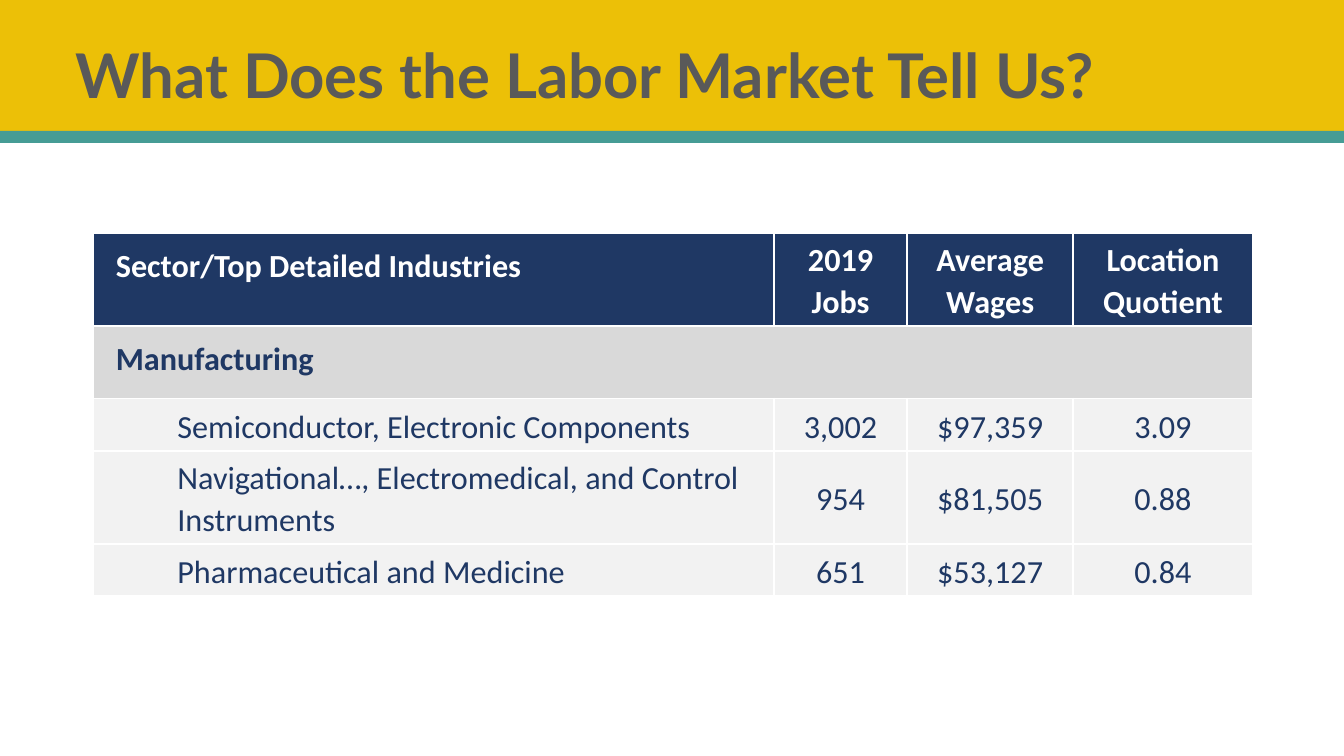
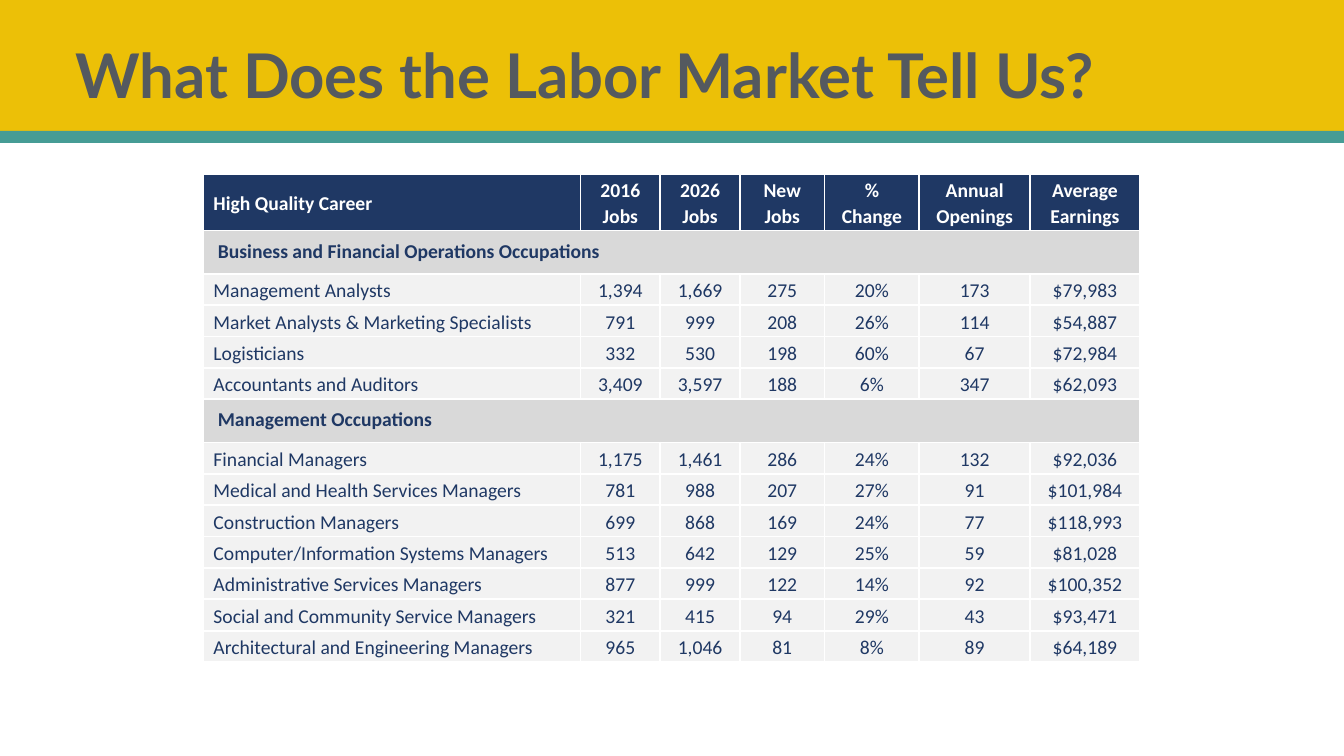
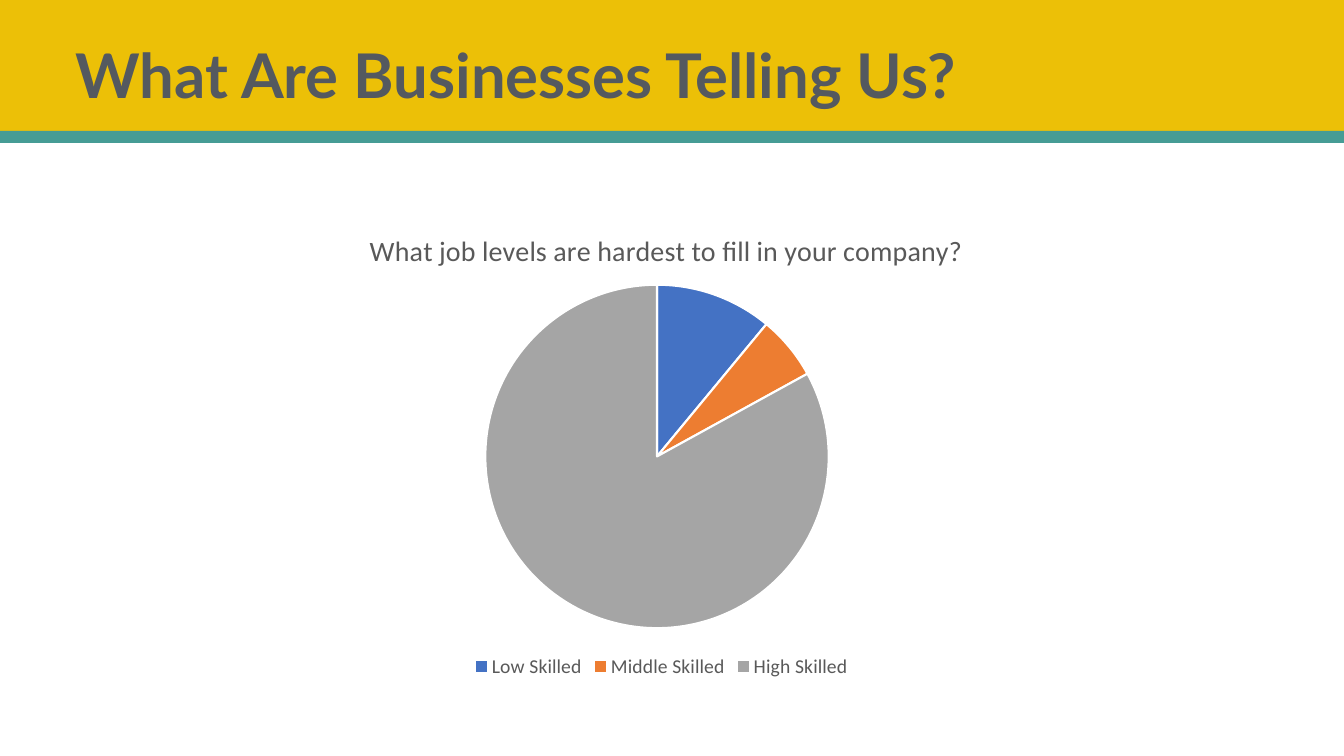
from lxml.etree import SubElement
from pptx import Presentation
from pptx.chart.data import CategoryChartData as ChartData
from pptx.dml.color import RGBColor
from pptx.enum.chart import XL_CHART_TYPE as Kind, XL_LEGEND_POSITION as Place
from pptx.enum.shapes import MSO_SHAPE as Shape
from pptx.enum.text import MSO_ANCHOR as Anchor, PP_ALIGN as Align
from pptx.oxml import parse_xml
from pptx.oxml.ns import nsdecls, qn
from pptx.util import Cm, Pt

WHITE = RGBColor(0xFF, 0xFF, 0xFF)
GOLD = RGBColor(0xEC, 0xC0, 0x07)
TEAL = RGBColor(0x46, 0x9C, 0x95)
NAVY = RGBColor(0x1F, 0x38, 0x64)
GREY = RGBColor(0x59, 0x59, 0x59)
SLATE = RGBColor(0x54, 0x59, 0x5F)
SILVER = RGBColor(0xD9, 0xD9, 0xD9)
PALE = RGBColor(0xF2, 0xF2, 0xF2)
BLUE = RGBColor(0x44, 0x72, 0xC4)
ORANGE = RGBColor(0xED, 0x7D, 0x31)
ASH = RGBColor(0xA5, 0xA5, 0xA5)

WIDTH, HEIGHT = 33.87, 19.05
BODY, HEAD = "Calibri", "Lato"

SECTORS = [
    ("Sector/Top Detailed Industries", "", "2019 Jobs", "Average Wages",
     "Location Quotient"),
    ("Manufacturing", "", "", "", ""),
    ("", "Semiconductor, Electronic Components", "3,002", "$97,359", "3.09"),
    ("", "Navigational…, Electromedical, and Control Instruments", "954",
     "$81,505", "0.88"),
    ("", "Pharmaceutical and Medicine", "651", "$53,127", "0.84"),
]

CAREERS = [
    ("High Quality Career", "2016 Jobs", "2026 Jobs", "New Jobs", "% Change",
     "Annual Openings", "Average Earnings"),
    ("Business and Financial Operations Occupations", "", "", "", "", "", ""),
    ("Management Analysts", "1,394", "1,669", "275", "20%", "173", "$79,983"),
    ("Market Analysts & Marketing Specialists", "791", "999", "208", "26%",
     "114", "$54,887"),
    ("Logisticians", "332", "530", "198", "60%", "67", "$72,984"),
    ("Accountants and Auditors", "3,409", "3,597", "188", "6%", "347",
     "$62,093"),
    ("Management Occupations", "", "", "", "", "", ""),
    ("Financial Managers", "1,175", "1,461", "286", "24%", "132", "$92,036"),
    ("Medical and Health Services Managers", "781", "988", "207", "27%", "91",
     "$101,984"),
    ("Construction Managers", "699", "868", "169", "24%", "77", "$118,993"),
    ("Computer/Information Systems Managers", "513", "642", "129", "25%", "59",
     "$81,028"),
    ("Administrative Services Managers", "877", "999", "122", "14%", "92",
     "$100,352"),
    ("Social and Community Service Managers", "321", "415", "94", "29%", "43",
     "$93,471"),
    ("Architectural and Engineering Managers", "965", "1,046", "81", "8%",
     "89", "$64,189"),
]

LEVELS = [("Low Skilled", 11, BLUE), ("Middle Skilled", 6, ORANGE),
          ("High Skilled", 83, ASH)]


def write(frame, text, size, color, font=BODY, bold=False, align=Align.LEFT,
          line=None):
    para = frame.paragraphs[0]
    para.alignment = align
    para.line_spacing = line
    run = para.add_run()
    run.text = text
    run.font.name = font
    run.font.size = Pt(size)
    run.font.bold = bold
    run.font.color.rgb = color


def add_band(slide, top, height, color):
    band = slide.shapes.add_shape(Shape.RECTANGLE, 0, Cm(top), Cm(WIDTH),
                                  Cm(height))
    band.shadow.inherit = False
    band.fill.solid()
    band.fill.fore_color.rgb = color
    band.line.fill.background()


def add_slide(deck, title, color=SLATE):
    slide = deck.slides.add_slide(deck.slide_layouts[6])
    add_band(slide, 0, 3.58, GOLD)
    add_band(slide, 3.3, 0.3, TEAL)
    box = slide.shapes.add_textbox(Cm(1.65), Cm(0.13), Cm(29.21), Cm(3.68))
    frame = box.text_frame
    frame.word_wrap = True
    frame.vertical_anchor = Anchor.MIDDLE
    write(frame, title, 44, color, font=HEAD, bold=True, line=0.9)
    return slide


def set_edges(cell, hidden=""):
    """Draw white borders, except on the sides named in hidden."""
    props = cell._tc.get_or_add_tcPr()
    for side in "LRTB":
        edge = SubElement(props, qn(f"a:ln{side}"), w=str(Pt(1.5)))
        if side in hidden:
            SubElement(edge, qn("a:noFill"))
        else:
            fill = SubElement(edge, qn("a:solidFill"))
            SubElement(fill, qn("a:srgbClr"), val=str(WHITE))


def set_pads(cell, side, top, bottom=0):
    cell.margin_left = cell.margin_right = Cm(side)
    cell.margin_top, cell.margin_bottom = Cm(top), Cm(bottom)


def fill_row(table, index, row, size, pad, wide):
    """Fill a row; blanks after the first label widen it, one before indents it."""
    label = next(i for i, text in enumerate(row) if text)
    section = not any(row[label + 1:])
    back = NAVY if index == 0 else SILVER if section else PALE
    end = label
    while end + 1 < len(row) and not row[end + 1]:
        end += 1
    for col, text in enumerate(row):
        cell = table.cell(index, col)
        set_edges(cell, "R" if col < label else "L" if col == label > 0 else "")
        cell.fill.solid()
        cell.fill.fore_color.rgb = back
        if not text:
            continue
        if col == label and end > label:
            set_pads(cell, *wide)
        else:
            set_pads(cell, *pad)
            cell.vertical_anchor = Anchor.MIDDLE
        write(cell.text_frame, text, size, WHITE if index == 0 else NAVY,
              bold=index == 0 or section, line=1.07,
              align=Align.LEFT if col == label else Align.CENTER)
    if end > label:
        table.cell(index, label).merge(table.cell(index, end))


def add_grid(slide, rows, left, top, widths, heights, size, pad, wide):
    frame = slide.shapes.add_table(len(rows), len(widths), Cm(left), Cm(top),
                                   Cm(sum(widths)), Cm(sum(heights)))
    table = frame.table
    table.first_row = table.horz_banding = False
    for col, width in zip(table.columns, widths):
        col.width = Cm(width)
    for index, row in enumerate(rows):
        table.rows[index].height = Cm(heights[index])
        fill_row(table, index, row, size, pad, wide)


def make_layout(inner=False, **spots):
    """Build a manual chart layout from fractions of the chart."""
    parts = '<c:layoutTarget val="inner"/>' if inner else ""
    parts += "".join(f'<c:{key}Mode val="edge"/>' for key in "xy")
    parts += "".join(f'<c:{key} val="{val}"/>' for key, val in spots.items())
    return parse_xml(f'<c:layout {nsdecls("c")}><c:manualLayout>{parts}'
                     '</c:manualLayout></c:layout>')


def place(parent, layout, after=None):
    for old in parent.findall(qn("c:layout")):
        parent.remove(old)
    if after is None:
        parent.insert(0, layout)
    else:
        parent.find(qn(after)).addnext(layout)


def add_pie(slide, title, levels):
    data = ChartData()
    data.categories = [name for name, _, _ in levels]
    data.add_series("Series 1", [value for _, value, _ in levels])
    chart = slide.shapes.add_chart(Kind.PIE, Cm(4.98), Cm(5.08), Cm(23.39),
                                   Cm(12.12), data).chart
    chart.font.name = BODY
    chart.font.size = Pt(10)
    chart.has_title = True
    write(chart.chart_title.text_frame, title, 20, GREY, align=Align.CENTER)
    place(chart.chart_title._element, make_layout(x=0.18, y=0.05), "c:tx")
    chart.has_legend = True
    legend = chart.legend
    legend.position = Place.BOTTOM
    legend.include_in_layout = False
    legend.font.name = BODY
    legend.font.size = Pt(14)
    legend.font.color.rgb = GREY
    plot = chart.plots[0]
    plot.vary_by_categories = True
    place(plot._element.getparent(),
          make_layout(inner=True, x=0.31, y=0.17, w=0.37, h=0.72))
    for index, (_, _, color) in enumerate(levels):
        style = plot.series[0].points[index].format
        style.fill.solid()
        style.fill.fore_color.rgb = color
        style.line.color.rgb = WHITE
        style.line.width = Pt(1.5)


def main():
    deck = Presentation()
    deck.slide_width, deck.slide_height = Cm(WIDTH), Cm(HEIGHT)
    market = "What Does the Labor Market Tell Us?"

    slide = add_slide(deck, market, GREY)
    add_grid(slide, SECTORS, 2.34, 5.87, [1.7, 15.47, 3.35, 4.19, 4.52],
             [2.34, 1.83, 1.32, 2.34, 1.32], 23,
             pad=(0.43, 0.05), wide=(0.58, 0.28, 0.28))

    slide = add_slide(deck, market)
    heights = [1.42] + [0.79 if row[1] else 1.09 for row in CAREERS[1:]]
    add_grid(slide, CAREERS, 5.13, 4.39,
             [9.5, 2.01, 2.01, 2.13, 2.39, 2.79, 2.77], heights, 14,
             pad=(0.25, 0.03), wide=(0.36, 0.18, 0.18))

    slide = add_slide(deck, "What Are Businesses Telling Us?")
    add_pie(slide, "What job levels are hardest to fill in your company?",
            LEVELS)
    deck.save("out.pptx")


if __name__ == "__main__":
    main()
